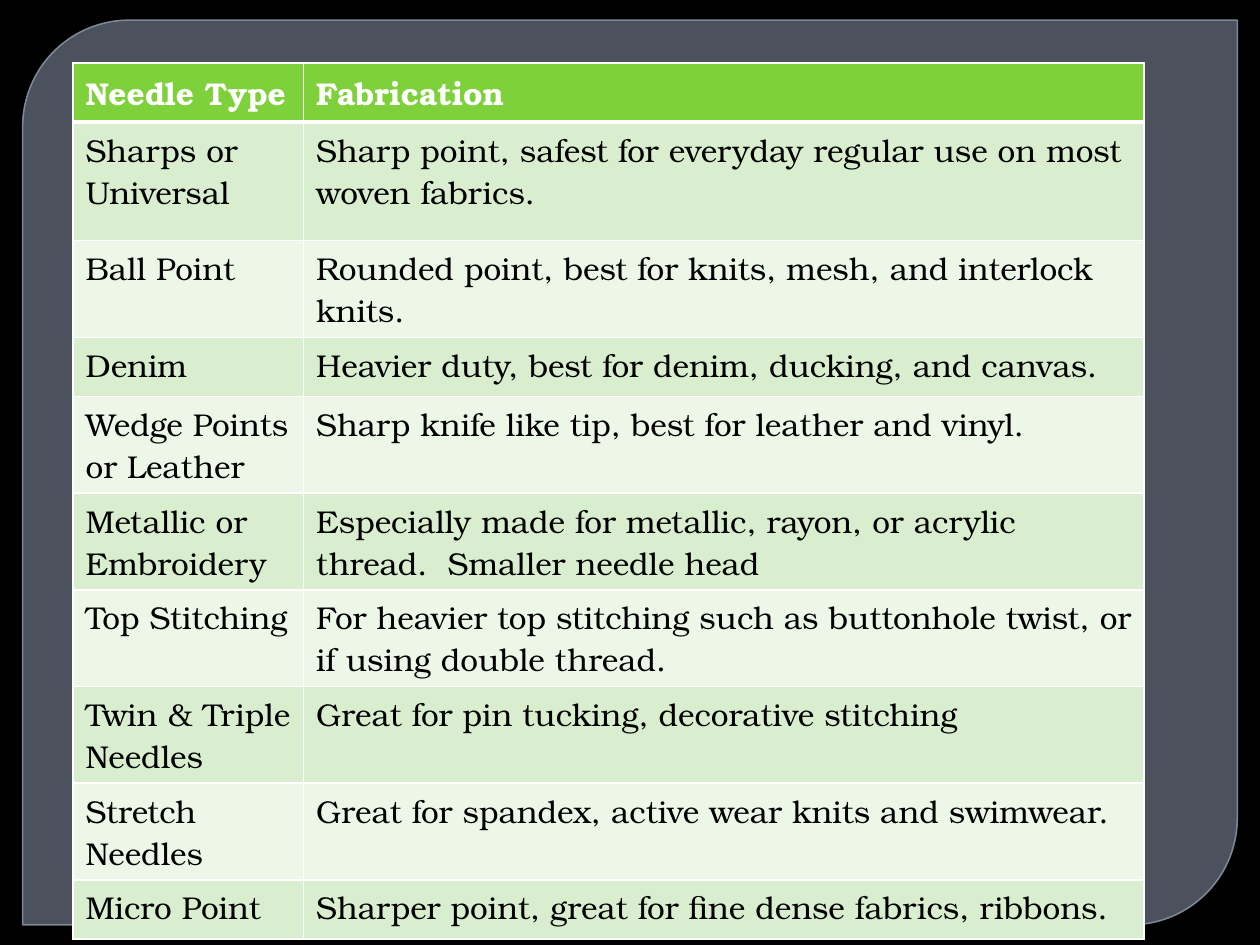
from lxml.etree import SubElement
from pptx import Presentation
from pptx.dml.color import RGBColor
from pptx.enum.shapes import MSO_SHAPE
from pptx.oxml.ns import qn
from pptx.util import Inches, Pt

FONT = "TeX Gyre Bonum"
COLORS = {
    "back": "000000",
    "panel": "767F8F",
    "edge": "8B94A4",
    "head": "7FD13B",
    "dark": "D8EECE",
    "light": "ECF7E8",
    "white": "FFFFFF",
    "text": "000000",
}
NEEDLES = [
    ("Needle Type", "Fabrication"),
    ("Sharps or Universal",
     "Sharp point, safest for everyday regular use on most woven fabrics."),
    ("Ball Point", "Rounded point, best for knits, mesh, and interlock knits."),
    ("Denim", "Heavier duty, best for denim, ducking, and canvas."),
    ("Wedge Points or Leather",
     "Sharp knife like tip, best for leather and vinyl."),
    ("Metallic or Embroidery",
     "Especially made for metallic, rayon, or acrylic thread.  Smaller needle head"),
    ("Top Stitching",
     "For heavier top stitching such as buttonhole twist, or if using double thread."),
    ("Twin & Triple Needles", "Great for pin tucking, decorative stitching"),
    ("Stretch Needles", "Great for spandex, active wear knits and swimwear."),
    ("Micro Point", "Sharper point, great for fine dense fabrics, ribbons."),
]
WIDTHS = (1.83, 6.67)
ROW = 0.47


def paint(fill, name):
    fill.solid()
    fill.fore_color.rgb = RGBColor.from_string(COLORS[name])


def fade(node, percent):
    color = next(node.iter(qn("a:srgbClr")))
    SubElement(color, qn("a:alpha"), val=str(percent * 1000))


def add_panel(slide):
    panel = slide.shapes.add_shape(
        MSO_SHAPE.ROUND_2_DIAG_RECTANGLE,
        Inches(0.18), Inches(0.16), Inches(9.64), Inches(7.18))
    panel.adjustments[0] = 0.118
    panel.adjustments[1] = 0
    panel.shadow.inherit = False
    paint(panel.fill, "panel")
    paint(panel.line.fill, "edge")
    panel.line.width = Pt(0.87)
    props = panel.element.spPr
    fade(props.find(qn("a:solidFill")), 65)
    fade(props.find(qn("a:ln")), 88)


def add_edges(cell, base):
    props = cell._tc.get_or_add_tcPr()
    for side in "LRTB":
        width = base if side == "B" else 1
        line = SubElement(props, qn("a:ln" + side), w=str(Pt(width)))
        fill = SubElement(line, qn("a:solidFill"))
        SubElement(fill, qn("a:srgbClr"), val=COLORS["white"])


def set_cell(cell, text, row):
    head = row == 0
    add_edges(cell, 3 if head else 1)
    paint(cell.fill, "head" if head else "dark" if row % 2 else "light")
    cell.text = text
    font = cell.text_frame.paragraphs[0].font
    font.name = FONT
    font.size = Pt(18)
    font.bold = head
    font.color.rgb = RGBColor.from_string(COLORS["white" if head else "text"])


def add_grid(slide):
    count = len(NEEDLES)
    table = slide.shapes.add_table(
        count, len(WIDTHS), Inches(0.58), Inches(0.5),
        Inches(sum(WIDTHS)), Inches(ROW * (count + 1))).table
    for col, width in zip(table.columns, WIDTHS):
        col.width = Inches(width)
    for row, texts in enumerate(NEEDLES):
        table.rows[row].height = Inches(ROW * 2 if row == 1 else ROW)
        for col, text in enumerate(texts):
            set_cell(table.cell(row, col), text, row)


def main():
    deck = Presentation()
    deck.slide_width = Inches(10)
    deck.slide_height = Inches(7.5)
    slide = deck.slides.add_slide(deck.slide_layouts[6])
    paint(slide.background.fill, "back")
    add_panel(slide)
    add_grid(slide)
    deck.save("out.pptx")


if __name__ == "__main__":
    main()
